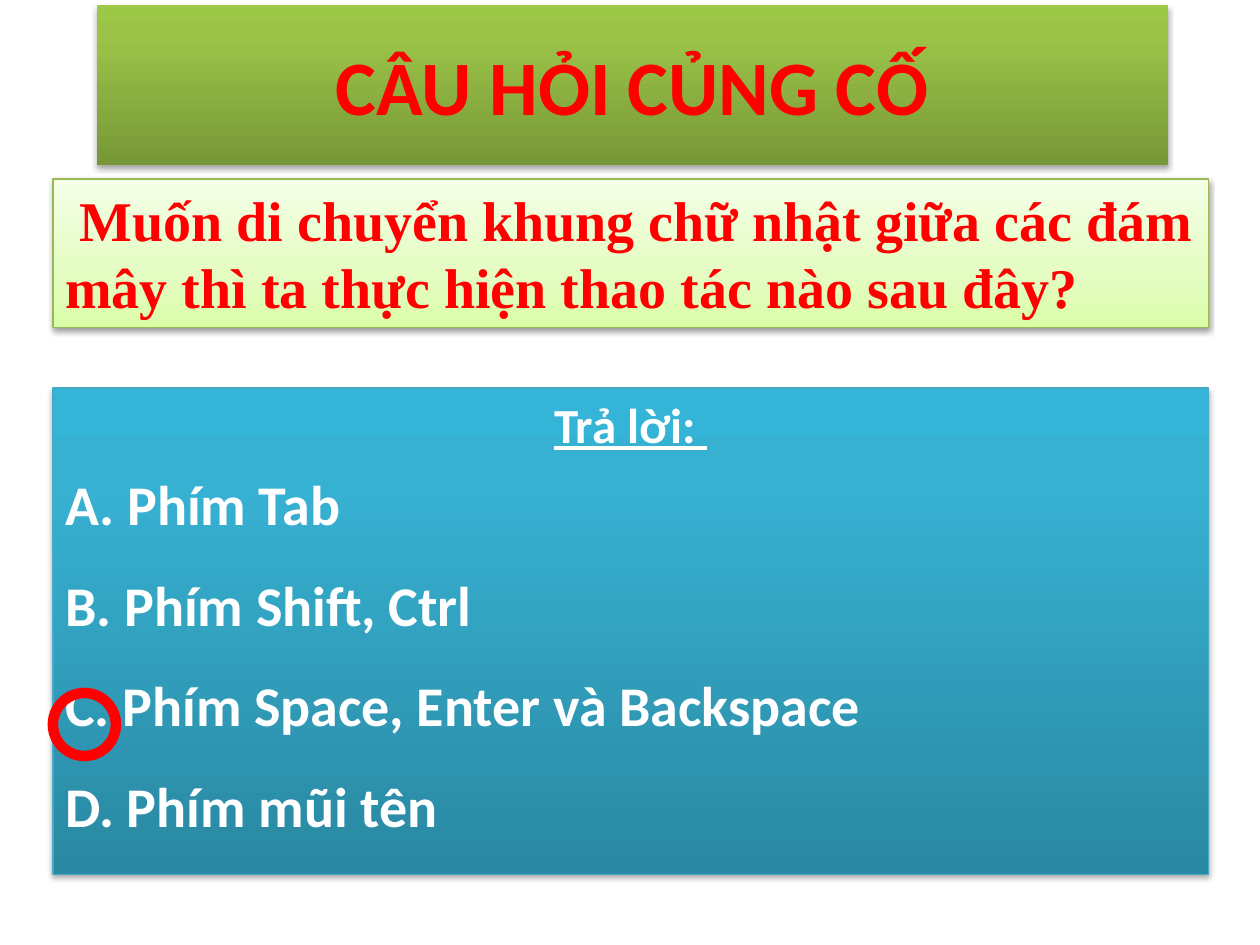
from copy import deepcopy

from lxml import etree
from pptx import Presentation
from pptx.dml.color import RGBColor
from pptx.enum.shapes import MSO_SHAPE as Shape
from pptx.enum.text import MSO_ANCHOR as Anchor, MSO_AUTO_SIZE as AutoSize, PP_ALIGN as Align
from pptx.oxml.ns import qn
from pptx.util import Inches, Pt

RED, WHITE = "FF0000", "FFFFFF"
TITLE = "CÂU HỎI CỦNG CỐ"
QUESTION = " Muốn di chuyển khung chữ nhật giữa các đám mây thì ta thực hiện thao tác nào sau đây?"
ANSWER_HEADING = "Trả lời: "
ANSWERS = [
    "A. Phím Tab",
    "B. Phím Shift, Ctrl",
    "C. Phím Space, Enter và Backspace",
    "D. Phím mũi tên",
]

# Panel looks: gradient stops from bottom to top, border, shadow opacity and blur
GREEN = dict(stops=[(0, "779737"), (0.8, "9BC348"), (1, "9DC746")],
             border=None, opacity=35, distance=1.8)
LIME = dict(stops=[(0, "DAFDA7"), (0.35, "E4FCC2"), (1, "F5FFE7")],
            border="98B955", opacity=38, distance=1.6)
BLUE = dict(stops=[(0, "2A88A2"), (0.8, "37B1D2"), (1, "34B4D6")],
            border="46AAC5", opacity=35, distance=1.8)

TITLE_FONT = dict(name="Calibri", size=Pt(44), bold=True)
QUESTION_FONT = dict(name="Times New Roman", size=Pt(32), bold=True)
HEADING_FONT = dict(name="Calibri", size=Pt(28), bold=True, underline=True)
ANSWER_FONT = dict(name="Calibri", size=Pt(32), bold=True)
ANSWER_GAP = dict(space_before=Pt(9.5), space_after=Pt(9.5))


def rgb(value):
    return RGBColor.from_string(value)


def place(shape, left, top, width, height):
    for name, value in dict(left=left, top=top, width=width, height=height).items():
        setattr(shape, name, Inches(value))


def add_shadow(shape, opacity, distance):
    """Drop a soft black shadow straight down; distance is in points."""
    effects = etree.SubElement(shape._element.spPr, qn("a:effectLst"))
    shadow = etree.SubElement(effects, qn("a:outerShdw"), blurRad=str(Pt(3.1)),
                              dist=str(Pt(distance)), dir="5400000", rotWithShape="0")
    color = etree.SubElement(shadow, qn("a:srgbClr"), val="000000")
    etree.SubElement(color, qn("a:alpha"), val=str(opacity * 1000))


def style_panel(shape, stops, border, opacity, distance):
    shape.fill.gradient()
    shape.fill.gradient_angle = 90
    stop_list = shape._element.spPr.find(".//" + qn("a:gsLst"))
    stop_list.append(deepcopy(stop_list[-1]))
    for stop, (position, color) in zip(shape.fill.gradient_stops, stops):
        stop.position = position
        stop.color.rgb = rgb(color)
    if border:
        shape.line.color.rgb = rgb(border)
        shape.line.width = Pt(0.75)
    else:
        shape.line.fill.background()
    add_shadow(shape, opacity, distance)


def write(para, text, font, color, **layout):
    span = para.add_run()
    span.text = text
    for name, value in font.items():
        setattr(span.font, name, value)
    span.font.color.rgb = rgb(color)
    for name, value in layout.items():
        setattr(para, name, value)


def add_panel(page, top, height, look):
    box = page.shapes.add_textbox(Inches(0.42), Inches(top), Inches(9.17), Inches(height))
    box.text_frame.word_wrap = True
    style_panel(box, **look)
    return box.text_frame


def main():
    deck = Presentation()
    deck.slide_width, deck.slide_height = Inches(10), Inches(7.5)
    page = deck.slides.add_slide(deck.slide_layouts[0])
    subtitle = page.placeholders[1]._element
    subtitle.getparent().remove(subtitle)

    title = page.shapes.title
    place(title, 0.77, 0.04, 8.5, 1.27)
    style_panel(title, **GREEN)
    title.text_frame.auto_size = AutoSize.NONE
    title.text_frame.vertical_anchor = Anchor.MIDDLE
    write(title.text_frame.paragraphs[0], TITLE, TITLE_FONT, RED, alignment=Align.CENTER)

    question = add_panel(page, 1.42, 1.18, LIME)
    write(question.paragraphs[0], QUESTION, QUESTION_FONT, RED)

    answers = add_panel(page, 3.08, 3.86, BLUE)
    write(answers.paragraphs[0], ANSWER_HEADING, HEADING_FONT, WHITE, alignment=Align.CENTER)
    for answer in ANSWERS:
        write(answers.add_paragraph(), answer, ANSWER_FONT, WHITE, **ANSWER_GAP)

    ring = page.shapes.add_shape(Shape.OVAL, Inches(0.42), Inches(5.5), Inches(0.5), Inches(0.5))
    ring.shadow.inherit = False
    ring.fill.background()
    ring.line.color.rgb = rgb(RED)
    ring.line.width = Pt(6)

    deck.save("out.pptx")


if __name__ == "__main__":
    main()
